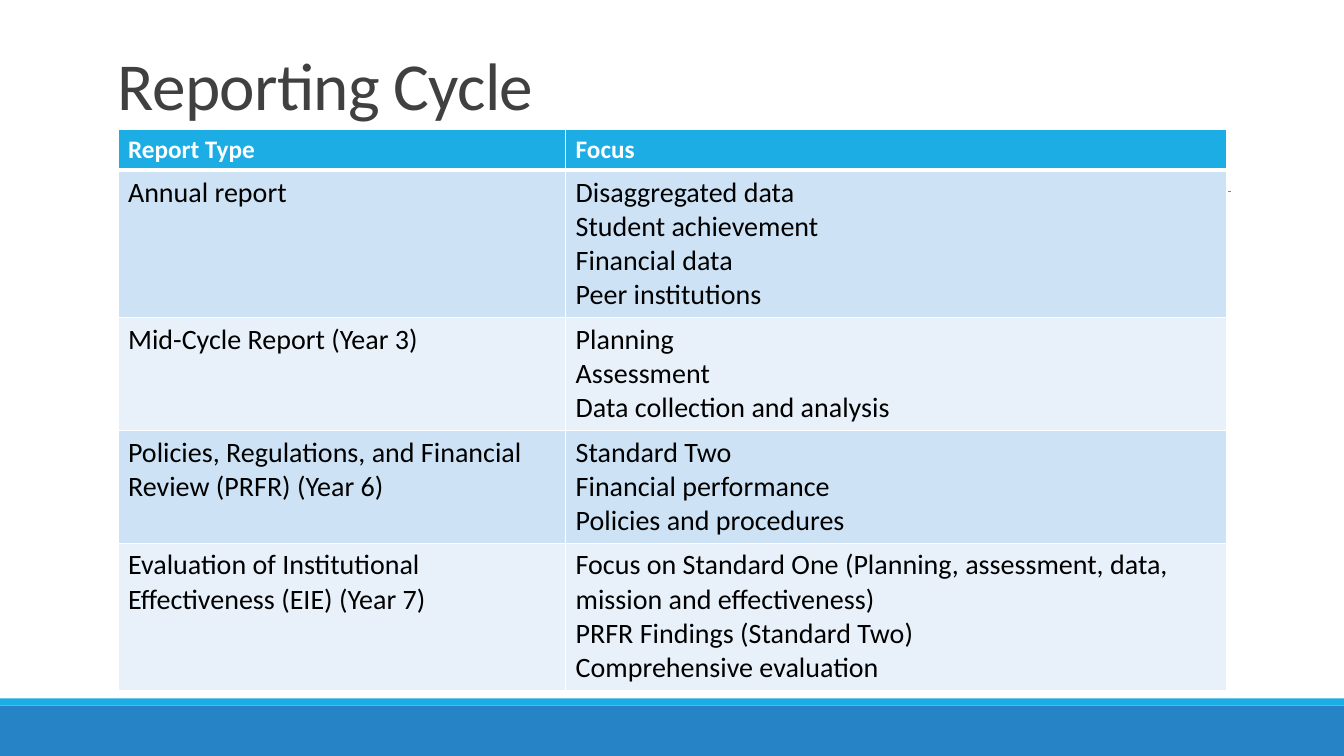
from dataclasses import dataclass

from lxml import etree
from pptx import Presentation
from pptx.dml.color import RGBColor
from pptx.enum import shapes, text
from pptx.oxml import ns
from pptx.util import Inches, Pt


@dataclass(frozen=True)
class Theme:
    font: str = "Calibri"
    white: str = "FFFFFF"
    black: str = "000000"
    title: str = "404040"
    rule: str = "808080"
    footer: str = "2683C6"
    accent: str = "1CADE4"
    bands: tuple = ("CDE3F5", "E8F1FA")
    title_size: int = 48
    header_size: int = 18
    body_size: int = 20


THEME = Theme()
COLUMN_WIDTHS = (4.44, 6.56)
ROW_HEIGHTS = (0.41, 1.46, 1.12, 1.12, 1.46)
HEADERS = ("Report Type", "Focus")
REPORTS = (
    ("Annual report",
     ("Disaggregated data", "Student achievement", "Financial data", "Peer institutions")),
    ("Mid-Cycle Report (Year 3)",
     ("Planning", "Assessment", "Data collection and analysis")),
    ("Policies, Regulations, and Financial Review (PRFR) (Year 6)",
     ("Standard Two", "Financial performance", "Policies and procedures")),
    ("Evaluation of Institutional Effectiveness (EIE) (Year 7)",
     ("Focus on Standard One (Planning, assessment, data, mission and effectiveness)\n"
      "PRFR Findings (Standard Two)", "Comprehensive evaluation")),
)


def rgb(color):
    return RGBColor.from_string(color)


def add_run(paragraph, content, size, color, bold=False):
    run = paragraph.add_run()
    run.text = content
    run.font.name = THEME.font
    run.font.size = Pt(size)
    run.font.bold = bold
    run.font.color.rgb = rgb(color)
    return run


def add_band(slide, top, height, color):
    band = slide.shapes.add_shape(
        shapes.MSO_SHAPE.RECTANGLE, 0, Inches(top), Inches(13.33), Inches(height))
    band.shadow.inherit = False
    band.fill.solid()
    band.fill.fore_color.rgb = rgb(color)
    band.line.fill.background()


def add_rule(slide, left, right, top):
    rule = slide.shapes.add_connector(
        shapes.MSO_CONNECTOR.STRAIGHT, Inches(left), Inches(top), Inches(right), Inches(top))
    rule.line.color.rgb = rgb(THEME.rule)
    rule.line.width = Pt(0.5)
    etree.SubElement(rule.element.spPr, ns.qn("a:effectLst"))


def add_title(slide, content):
    box = slide.shapes.add_textbox(Inches(1.07), 0, Inches(11), Inches(1.28))
    frame = box.text_frame
    frame.word_wrap = True
    frame.vertical_anchor = text.MSO_ANCHOR.BOTTOM
    paragraph = frame.paragraphs[0]
    paragraph.line_spacing = 0.85
    run = add_run(paragraph, content, THEME.title_size, THEME.title)
    run.font._element.set("spc", "-50")


def set_borders(cell, top, bottom):
    properties = cell._tc.get_or_add_tcPr()
    widths = {"a:lnL": 1, "a:lnR": 1, "a:lnT": top, "a:lnB": bottom}
    for index, (tag, width) in enumerate(widths.items()):
        line = etree.Element(ns.qn(tag), w=str(Pt(width)))
        fill = etree.SubElement(line, ns.qn("a:solidFill"))
        etree.SubElement(fill, ns.qn("a:srgbClr"), val=THEME.white)
        properties.insert(index, line)


def fill_cell(cell, items, fill, size, color, bold):
    cell.fill.solid()
    cell.fill.fore_color.rgb = rgb(fill)
    frame = cell.text_frame
    for index, item in enumerate(items):
        paragraph = frame.add_paragraph() if index else frame.paragraphs[0]
        for number, line in enumerate(item.split("\n")):
            if number:
                paragraph.add_line_break()
            add_run(paragraph, line, size, color, bold)


def add_report_table(slide):
    table = slide.shapes.add_table(
        len(ROW_HEIGHTS), len(COLUMN_WIDTHS), Inches(1.17), Inches(1.28),
        Inches(sum(COLUMN_WIDTHS)), Inches(sum(ROW_HEIGHTS))).table
    for column, width in zip(table.columns, COLUMN_WIDTHS):
        column.width = Inches(width)
    for row, height in zip(table.rows, ROW_HEIGHTS):
        row.height = Inches(height)
    for column, header in enumerate(HEADERS):
        cell = table.cell(0, column)
        fill_cell(cell, (header,), THEME.accent, THEME.header_size, THEME.white, True)
        set_borders(cell, 1, 3)
    for row, (report, focus) in enumerate(REPORTS, 1):
        for column, items in enumerate(((report,), focus)):
            cell = table.cell(row, column)
            fill_cell(cell, items, THEME.bands[(row - 1) % 2],
                      THEME.body_size, THEME.black, False)
            set_borders(cell, 3 if row == 1 else 1, 1)


def main():
    presentation = Presentation()
    presentation.slide_width = Inches(13.33)
    presentation.slide_height = Inches(7.5)
    slide = presentation.slides.add_slide(presentation.slide_layouts[6])
    add_band(slide, 7, 0.5, THEME.footer)
    add_band(slide, 6.93, 0.07, THEME.accent)
    add_rule(slide, 1.31, 12.21, 1.9)
    add_title(slide, "Reporting Cycle")
    add_report_table(slide)
    presentation.save("out.pptx")


if __name__ == "__main__":
    main()
